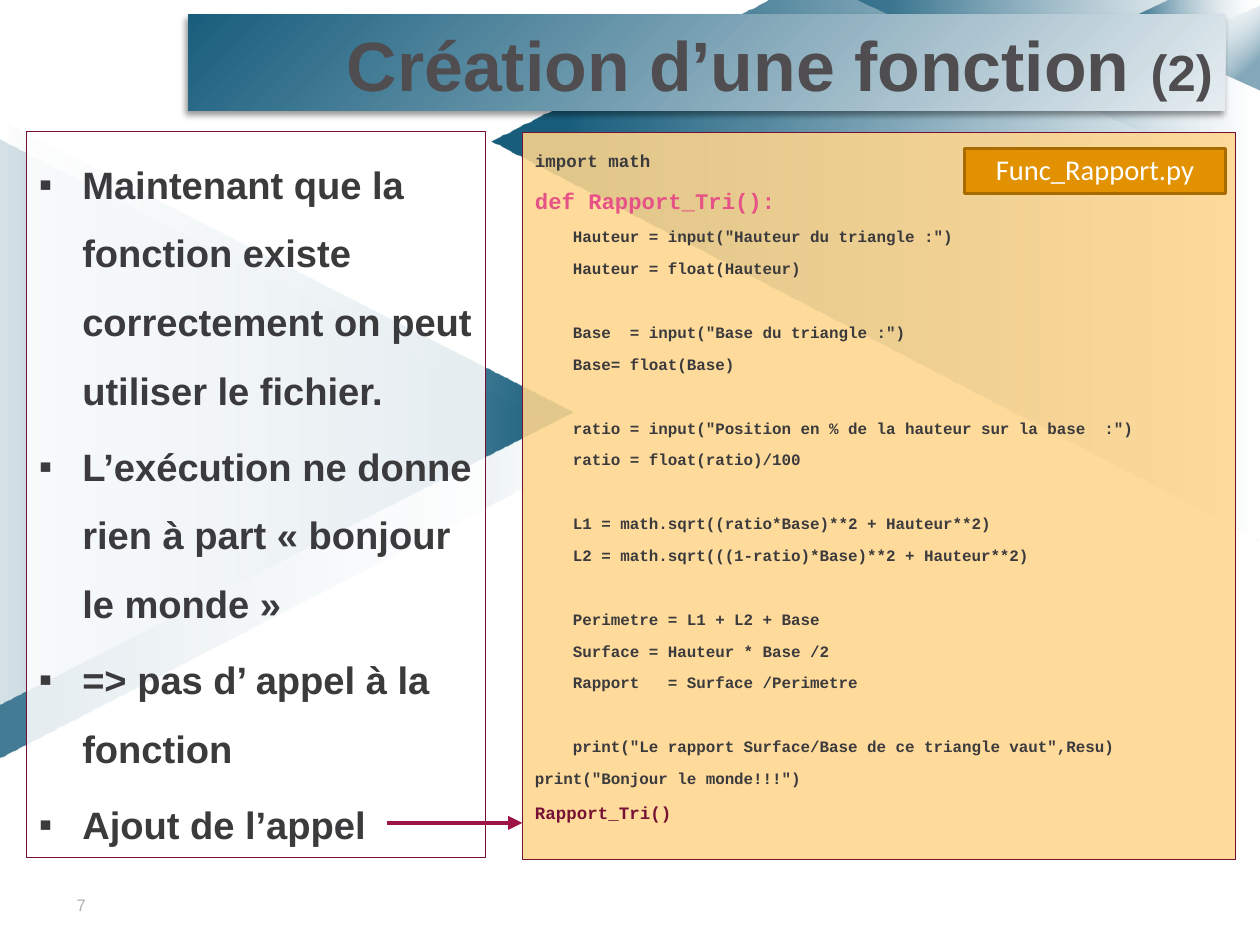
from dataclasses import dataclass

from lxml import etree
from pptx import Presentation
from pptx import util as u
from pptx.dml.color import RGBColor
from pptx.enum import shapes, text
from pptx.oxml import ns, parse_xml

Inches, Pt = u.Inches, u.Pt


@dataclass(frozen=True)
class Theme:
    sans: str = "Arial"
    mono: str = "Courier New"
    label: str = "Calibri"
    white: str = "FFFFFF"
    blue: str = "004D6F"
    banner_dark: str = "195E7D"
    banner_light: str = "E6EDF1"
    title: str = "4F4D50"
    ink: str = "3B3A3C"
    page: str = "B2B2B2"
    pink: str = "E65287"
    wine: str = "761135"
    border: str = "741135"
    arrow: str = "9D1345"
    code_panel: str = "FFD68D"
    orange: str = "E29100"
    orange_line: str = "A76B00"
    title_size: float = 44
    subtitle_size: float = 32
    list_size: float = 24
    label_size: float = 18
    def_size: float = 14
    call_size: float = 11
    code_size: float = 10
    page_size: float = 10.5


theme = Theme()


def paint(shape, stops, direction):
    """Fill with (position %, colour, opacity %) stops; one stop gives a solid fill."""
    colours = [f'<a:srgbClr val="{colour}"><a:alpha val="{opacity * 1000}"/></a:srgbClr>'
               for _, colour, opacity in stops]
    if len(stops) == 1:
        body = f"<a:solidFill {ns.nsdecls('a')}>{colours[0]}</a:solidFill>"
    else:
        marks = "".join(f'<a:gs pos="{stop[0] * 1000}">{colour}</a:gs>'
                        for stop, colour in zip(stops, colours))
        body = (f'<a:gradFill {ns.nsdecls("a")} rotWithShape="1">'
                f"<a:gsLst>{marks}</a:gsLst>{direction}</a:gradFill>")
    shape.fill.background()
    properties = shape.element.spPr
    properties.replace(properties.find(ns.qn("a:noFill")), parse_xml(body))


def write(paragraph, wording, font, size, colour, bold=True):
    run = paragraph.add_run()
    run.text = wording
    for name, value in dict(name=font, size=Pt(size), bold=bold).items():
        setattr(run.font, name, value)
    run.font.color.rgb = RGBColor.from_string(colour)


presentation = Presentation()
presentation.slide_width, presentation.slide_height = u.Cm(28), u.Cm(21)
slide = presentation.slides.add_slide(presentation.slide_layouts[3])
title, steps, code = slide.placeholders

# Background triangles: left, top, width, height, rotation, angle, stops
triangles = [
    (-0.08, 1.3, 5.41, 5.25, 90, 90, (1, 20), (91, 73)),
    (-0.06, 1.1, 5.12, 5.01, 90, 270, (1, 77), (91, 83)),
    (10.24, 0.01, 0.75, 0.82, 270, 135, (27, 0), (81, 48)),
]
# Background outlines: points, stops
outlines = [
    ([(11.01, 4.72), (4.3, 1.24), (6.74, 0), (11.02, 0)], (1, 100), (91, 90)),
    ([(11.01, 1.62), (7.49, 0), (11.02, 0)], (1, 0), (91, 53)),
    ([(11.02, 0.66), (9.92, 0.15), (10.24, 0), (11.02, 0)], (1, 0), (91, 63)),
]
background = []
for left, top, width, height, rotation, angle, light, dark in triangles:
    shape = slide.shapes.add_shape(shapes.MSO_SHAPE.ISOSCELES_TRIANGLE, Inches(left),
                                   Inches(top), Inches(width), Inches(height))
    shape.rotation = rotation
    background.append((shape, angle, light, dark))
for points, light, dark in outlines:
    corners = [(Inches(x), Inches(y)) for x, y in points]
    builder = slide.shapes.build_freeform(*corners[0])
    builder.add_line_segments(corners[1:], close=True)
    background.append((builder.convert_to_shape(), 180, light, dark))
background.insert(5, background.pop(2))
for depth, (shape, angle, light, dark) in enumerate(background, start=2):
    paint(shape, [(light[0], theme.white, light[1]), (dark[0], theme.blue, dark[1])],
          f'<a:lin ang="{angle * 60000}" scaled="0"/>')
    shape.line.fill.background()
    shape.shadow.inherit = False
    slide.shapes.element.insert(depth, shape.element)

page = slide.shapes.add_textbox(Inches(0.56), Inches(7.78), Inches(0.52), Inches(0.29))
page.text_frame.margin_left = page.text_frame.margin_right = Inches(0.11)
label = slide.shapes.add_shape(shapes.MSO_SHAPE.RECTANGLE, Inches(8.44), Inches(1.3),
                               Inches(2.28), Inches(0.39))

# Placeholder: left, top, width, height
for shape, left, top, width, height in [
    (title, 1.65, 0.13, 9.07, 0.84),
    (steps, 0.23, 1.15, 4.02, 6.35),
    (code, 4.57, 1.16, 6.24, 6.36),
]:
    box = dict(left=left, top=top, width=width, height=height)
    for name, value in box.items():
        setattr(shape, name, Inches(value))
    frame_format = dict(margin_left=Inches(0.11), margin_right=Inches(0.11),
                        margin_top=Inches(0.06), margin_bottom=Inches(0.06),
                        word_wrap=True, auto_size=text.MSO_AUTO_SIZE.NONE,
                        vertical_anchor=text.MSO_ANCHOR.TOP)
    for name, value in frame_format.items():
        setattr(shape.text_frame, name, value)

paint(title, [(0, theme.banner_dark, 100), (100, theme.banner_light, 100)],
      '<a:path path="circle"><a:fillToRect r="100000" b="100000"/></a:path>')
title.element.spPr.append(parse_xml(
    f'<a:effectLst {ns.nsdecls("a")}><a:outerShdw blurRad="{Pt(4)}" dist="{Pt(3)}" '
    'dir="8100000"><a:srgbClr val="000000"><a:alpha val="40000"/></a:srgbClr>'
    "</a:outerShdw></a:effectLst>"))
heading = title.text_frame.paragraphs[0]
heading.alignment = text.PP_ALIGN.RIGHT
write(heading, "Création d’une fonction ", theme.sans, theme.title_size, theme.title)
write(heading, "(2)", theme.sans, theme.subtitle_size, theme.title)

step_lines = [
    "Maintenant que la fonction existe correctement on peut utiliser le fichier.",
    "L’exécution ne donne rien à part « bonjour le monde »",
    "=> pas d’ appel à la fonction",
    "Ajout de l’appel",
]
code_groups = [
    ["import math",
     "def Rapport_Tri():",
     '    Hauteur = input("Hauteur du triangle :")',
     "    Hauteur = float(Hauteur)"],
    ['    Base  = input("Base du triangle :")',
     "    Base= float(Base)"],
    ['    ratio = input("Position en % de la hauteur sur la base  :")',
     "    ratio = float(ratio)/100"],
    ["    L1 = math.sqrt((ratio*Base)**2 + Hauteur**2)",
     "    L2 = math.sqrt(((1-ratio)*Base)**2 + Hauteur**2)"],
    ["    Perimetre = L1 + L2 + Base",
     "    Surface = Hauteur * Base /2",
     "    Rapport   = Surface /Perimetre"],
    ['    print("Le rapport Surface/Base de ce triangle vaut",Resu)',
     'print("Bonjour le monde!!!")',
     "Rapport_Tri()"],
]
code_styles = {
    "import math": (theme.call_size, theme.ink),
    "def Rapport_Tri():": (theme.def_size, theme.pink),
    "Rapport_Tri()": (theme.call_size, theme.wine),
}
# Line: wording, space before, font, size, colour
step_rows = [(line, 4.8, theme.sans, theme.list_size, theme.ink) for line in step_lines]
code_rows = [(line, 2 if row else 22.2, theme.mono,
              *code_styles.get(line, (theme.code_size, theme.ink)))
             for group in code_groups for row, line in enumerate(group)]

for shape, rows, colour, indent, bullet in [
    (steps, step_rows, theme.white, 0.38, "▪"),
    (code, code_rows, theme.code_panel, 0, None),
]:
    paint(shape, [(0, colour, 87)], "")
    shape.line.color.rgb = RGBColor.from_string(theme.border)
    shape.line.width = Pt(0.75)
    for number, (wording, gap, font, size, ink) in enumerate(rows):
        frame = shape.text_frame
        paragraph = frame.add_paragraph() if number else frame.paragraphs[0]
        properties = paragraph._p.get_or_add_pPr()
        properties.set("marL", str(Inches(indent)))
        properties.set("indent", str(-Inches(indent)))
        if bullet:
            etree.SubElement(properties, ns.qn("a:buFont"), typeface=theme.sans)
            etree.SubElement(properties, ns.qn("a:buChar"), char=bullet)
        else:
            etree.SubElement(properties, ns.qn("a:buNone"))
        paragraph.line_spacing = 1.5
        paragraph.space_before = Pt(gap if number else 0)
        write(paragraph, wording, font, size, ink)

arrow = slide.shapes.add_connector(shapes.MSO_CONNECTOR.STRAIGHT, Inches(3.39), Inches(7.2),
                                   Inches(4.57), Inches(7.2))
arrow.line.color.rgb = RGBColor.from_string(theme.arrow)
arrow.line.width = Pt(3)
etree.SubElement(arrow.line._get_or_add_ln(), ns.qn("a:tailEnd"), type="triangle")
etree.SubElement(arrow.element.spPr, ns.qn("a:effectLst"))

label.shadow.inherit = False
label.fill.solid()
label.fill.fore_color.rgb = RGBColor.from_string(theme.orange)
label.line.color.rgb = RGBColor.from_string(theme.orange_line)
label.line.width = Pt(2)
for shape, wording, alignment, font, size, colour in [
    (page, "7", text.PP_ALIGN.LEFT, theme.sans, theme.page_size, theme.page),
    (label, "Func_Rapport.py", text.PP_ALIGN.CENTER, theme.label, theme.label_size, theme.white),
]:
    shape.text_frame.word_wrap = True
    shape.text_frame.vertical_anchor = text.MSO_ANCHOR.MIDDLE
    paragraph = shape.text_frame.paragraphs[0]
    paragraph.alignment = alignment
    paragraph.line_spacing = 0.93
    write(paragraph, wording, font, size, colour, bold=False)

presentation.save("out.pptx")
